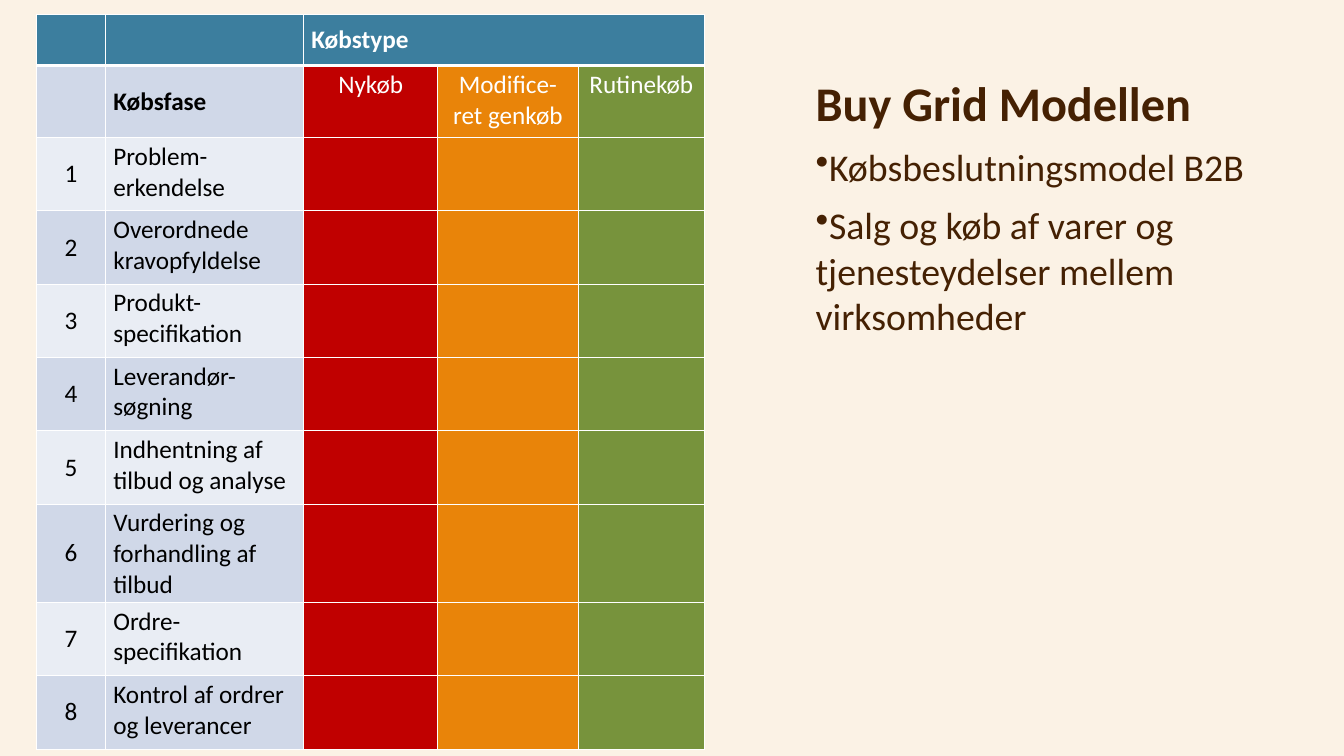
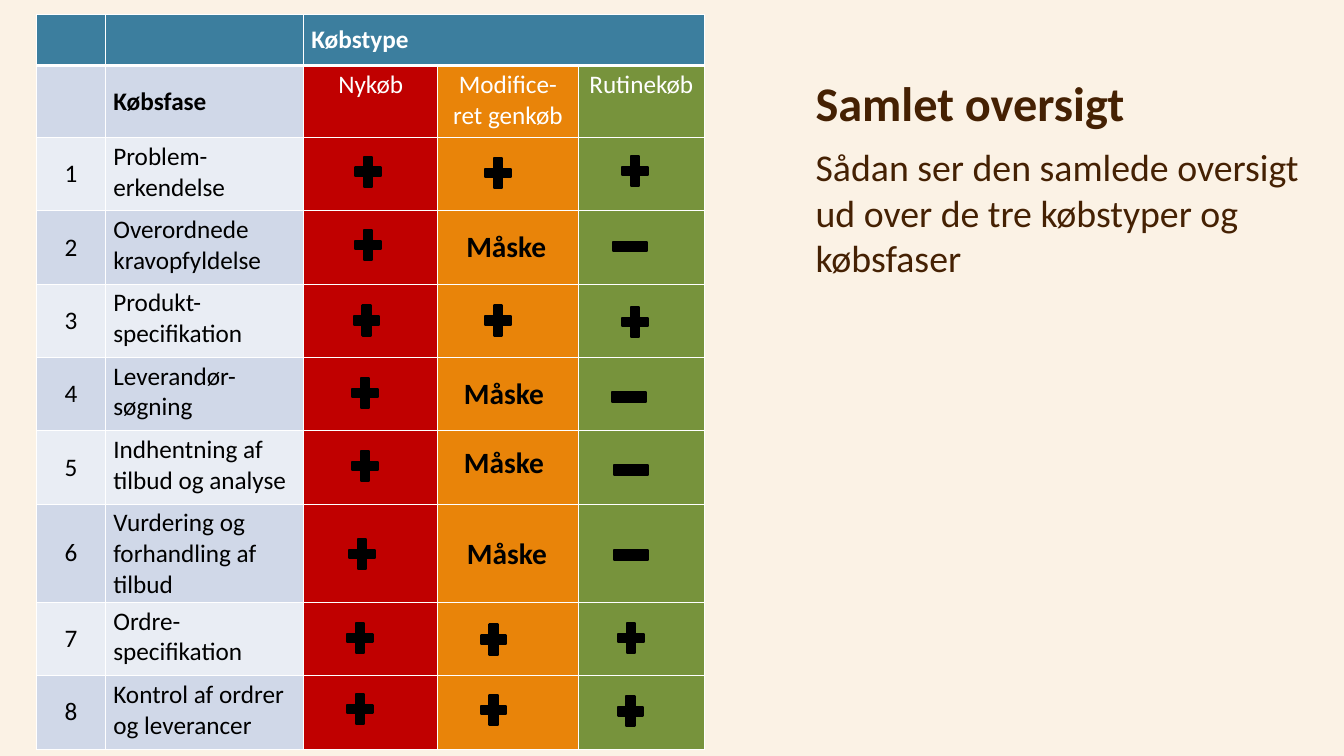
from pptx import Presentation
from pptx import util as u
from pptx.dml.color import RGBColor
from pptx.enum import shapes, text
from pptx.oxml import ns, xmlchemy

PX = 9144
FONT = "Calibri"
CREAM = RGBColor(0xFB, 0xF2, 0xE5)
BROWN = RGBColor(0x45, 0x21, 0x03)
WHITE = RGBColor(0xFF, 0xFF, 0xFF)
BLACK = RGBColor(0, 0, 0)
TEAL = RGBColor(0x3C, 0x7E, 0x9E)
BANDS = [RGBColor(0xE9, 0xED, 0xF4), RGBColor(0xD0, 0xD8, 0xE8)]
TYPE_COLOURS = [
    RGBColor(0xC0, 0, 0),
    RGBColor(0xE9, 0x84, 0x09),
    RGBColor(0x77, 0x93, 0x3C),
]

TYPES = ["Nykøb", "Modifice-ret genkøb", "Rutinekøb"]
PHASES = [
    "Problem-erkendelse",
    "Overordnede kravopfyldelse",
    "Produkt-specifikation",
    "Leverandør-søgning",
    "Indhentning af tilbud og analyse",
    "Vurdering og forhandling af tilbud",
    "Ordre-specifikation",
    "Kontrol af ordrer og leverancer",
]
COLUMN_WIDTHS = [92, 262, 177, 186, 167]
ROW_HEIGHTS = [68, 95] + [97] * len(PHASES)

PLUS, MINUS = shapes.MSO_SHAPE.MATH_PLUS, shapes.MSO_SHAPE.MATH_MINUS
MARK_WIDTHS = {PLUS: 46, MINUS: 61}
MARK_HEIGHT = 54
MAYBE = "Måske"
RATINGS = [
    [(PLUS, 464, 200), (PLUS, 636, 202), (PLUS, 817, 199)],
    [(PLUS, 464, 297), (MAYBE, 607, 297), (MINUS, 803, 299)],
    [(PLUS, 462, 397), (PLUS, 636, 397), (PLUS, 817, 399)],
    [(PLUS, 460, 493), (MAYBE, 604, 491), (MINUS, 802, 498)],
    [(PLUS, 460, 589), (MAYBE, 604, 583), (MINUS, 804, 595)],
    [(PLUS, 456, 706), (MAYBE, 608, 703), (MINUS, 804, 707)],
    [(PLUS, 453, 817), (PLUS, 630, 819), (PLUS, 812, 817)],
    [(PLUS, 453, 911), (PLUS, 630, 912), (PLUS, 811, 914)],
]


def px(*lengths):
    return [u.Emu(length * PX) for length in lengths]


def write(para, words, size=24, colour=BLACK, bold=False,
          align=text.PP_ALIGN.LEFT, before=0, spacing=1.0, bullet=None):
    if bullet:
        props = para._p.get_or_add_pPr()
        props.set("marL", "0")
        props.set("indent", "0")
        mark = xmlchemy.OxmlElement("a:buChar")
        mark.set("char", bullet)
        props.append(mark)
    para.alignment = align
    para.space_before = u.Pt(before)
    para.line_spacing = spacing
    span = para.add_run()
    span.text = words
    span.font.name = FONT
    span.font.size = u.Pt(size)
    span.font.bold = bold
    span.font.color.rgb = colour


class Builder:
    def __init__(self):
        self.deck = Presentation()
        self.deck.slide_width, self.deck.slide_height = px(1778, 1000)
        fill = self.deck.slide_master.background.fill
        fill.solid()
        fill.fore_color.rgb = CREAM
        self.page = None

    def add_page(self):
        self.page = self.deck.slides.add_slide(self.deck.slide_layouts[5])

    def heading(self, title, lines, height, bullet=None):
        box = self.page.shapes.title
        box.left, box.top, box.width, box.height = px(1066, 52, 722, height)
        frame = box.text_frame
        frame.word_wrap = True
        frame.auto_size = text.MSO_AUTO_SIZE.SHAPE_TO_FIT_TEXT
        frame.vertical_anchor = text.MSO_ANCHOR.TOP
        frame.margin_left, frame.margin_right = px(13, 13)
        frame.margin_top, frame.margin_bottom = px(7, 7)
        write(frame.paragraphs[0], title, size=46, colour=BROWN, bold=True, spacing=1.5)
        for line in lines:
            write(frame.add_paragraph(), line, size=36, colour=BROWN,
                  before=12, bullet=bullet)

    def borders(self, cell, top, bottom):
        props = cell._tc.get_or_add_tcPr()
        for side, points in (("L", 1), ("R", 1), ("T", top), ("B", bottom)):
            line = xmlchemy.OxmlElement(f"a:ln{side}")
            line.set("w", str(u.Pt(points)))
            solid = xmlchemy.OxmlElement("a:solidFill")
            colour = xmlchemy.OxmlElement("a:srgbClr")
            colour.set("val", str(WHITE))
            solid.append(colour)
            line.append(solid)
            props.append(line)

    def cell(self, cell, words, anchor=text.MSO_ANCHOR.TOP, **style):
        cell.vertical_anchor = anchor
        write(cell.text_frame.paragraphs[0], words, **style)

    def buy_grid(self):
        frame = self.page.shapes.add_table(
            len(ROW_HEIGHTS), len(COLUMN_WIDTHS),
            *px(48, 19, sum(COLUMN_WIDTHS), sum(ROW_HEIGHTS)))
        table = frame.table
        table.horz_banding = False
        for column, width in zip(table.columns, px(*COLUMN_WIDTHS)):
            column.width = width
        for row, height in zip(table.rows, px(*ROW_HEIGHTS)):
            row.height = height
        for r in range(len(ROW_HEIGHTS)):
            colours = [BANDS[r % 2]] * 2 + TYPE_COLOURS if r else [TEAL] * 5
            for c, colour in enumerate(colours):
                cell = table.cell(r, c)
                self.borders(cell, 3 if r == 1 else 1, 3 if r == 0 else 1)
                cell.fill.solid()
                cell.fill.fore_color.rgb = colour
        table.cell(0, 2).merge(table.cell(0, 4))
        middle, centre = text.MSO_ANCHOR.MIDDLE, text.PP_ALIGN.CENTER
        self.cell(table.cell(0, 2), "Købstype", middle, colour=WHITE, bold=True)
        self.cell(table.cell(1, 1), "Købsfase", middle, bold=True)
        for c, name in enumerate(TYPES, 2):
            self.cell(table.cell(1, c), name, colour=WHITE, align=centre)
        for number, phase in enumerate(PHASES, 1):
            self.cell(table.cell(number + 1, 0), str(number), middle, align=centre)
            self.cell(table.cell(number + 1, 1), phase)

    def mark(self, kind, left, top):
        shape = self.page.shapes.add_shape(
            kind, *px(left, top, MARK_WIDTHS[kind], MARK_HEIGHT))
        shape.shadow.inherit = False
        shape.fill.solid()
        shape.fill.fore_color.rgb = BLACK
        shape.line.color.rgb = BLACK
        shape.line.width = u.Pt(2)

    def label(self, words, left, top):
        box = self.page.shapes.add_textbox(*px(left, top, 127, 57))
        frame = box.text_frame
        frame.word_wrap = False
        frame.auto_size = text.MSO_AUTO_SIZE.SHAPE_TO_FIT_TEXT
        write(frame.paragraphs[0], words, size=28, bold=True)

    def ratings(self):
        for row in RATINGS:
            for kind, left, top in row:
                if kind == MAYBE:
                    self.label(kind, left, top)
                else:
                    self.mark(kind, left, top)


def main():
    builder = Builder()

    builder.add_page()
    builder.heading("Buy Grid Modellen", [
        "Købsbeslutningsmodel B2B",
        "Salg og køb af varer og tjenesteydelser mellem virksomheder",
    ], 406, bullet="•")
    builder.buy_grid()

    builder.add_page()
    builder.heading("Samlet oversigt", [
        "Sådan ser den samlede oversigt ud over de tre købstyper og købsfaser",
    ], 328)
    builder.buy_grid()
    builder.ratings()

    builder.deck.save("out.pptx")


if __name__ == "__main__":
    main()
